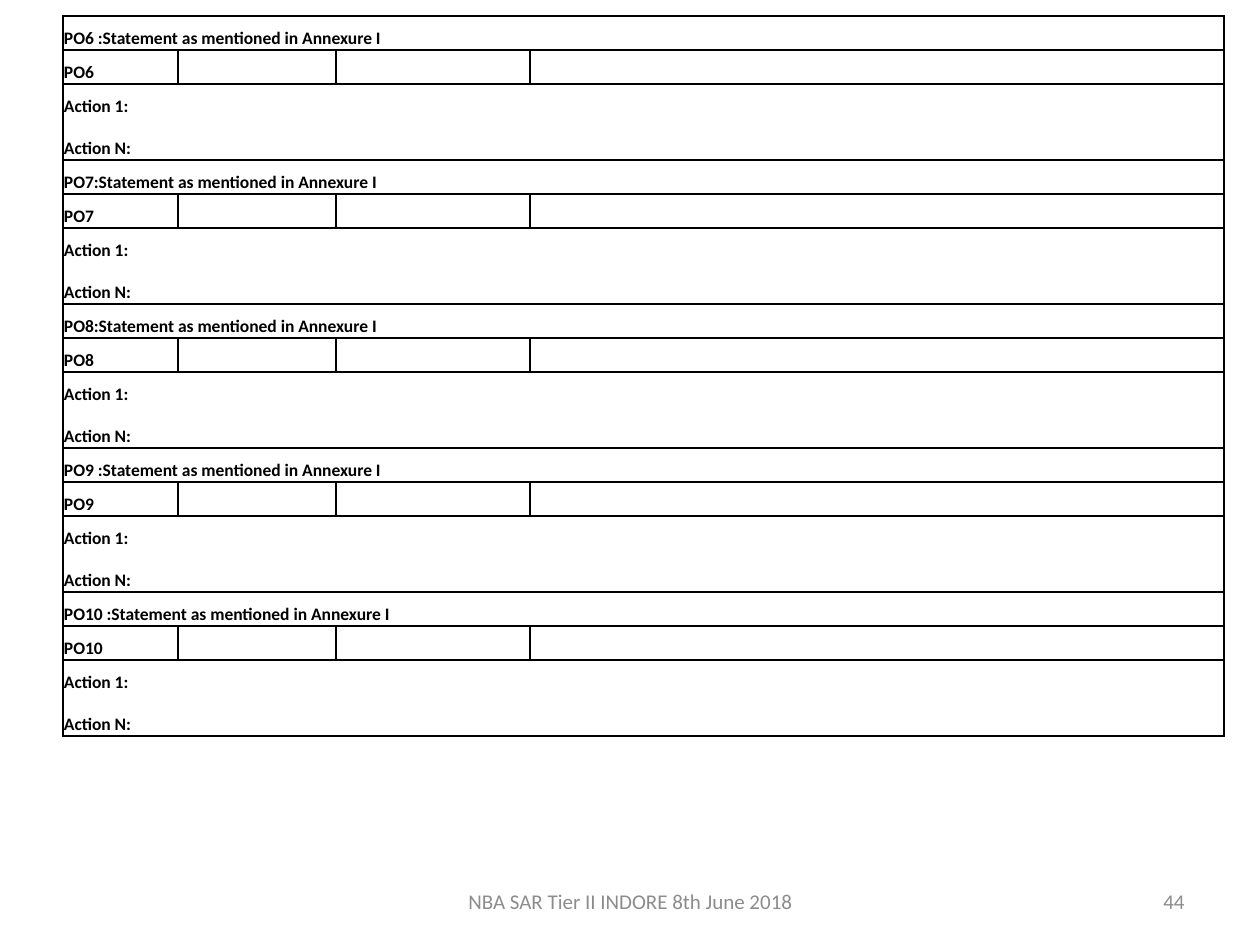
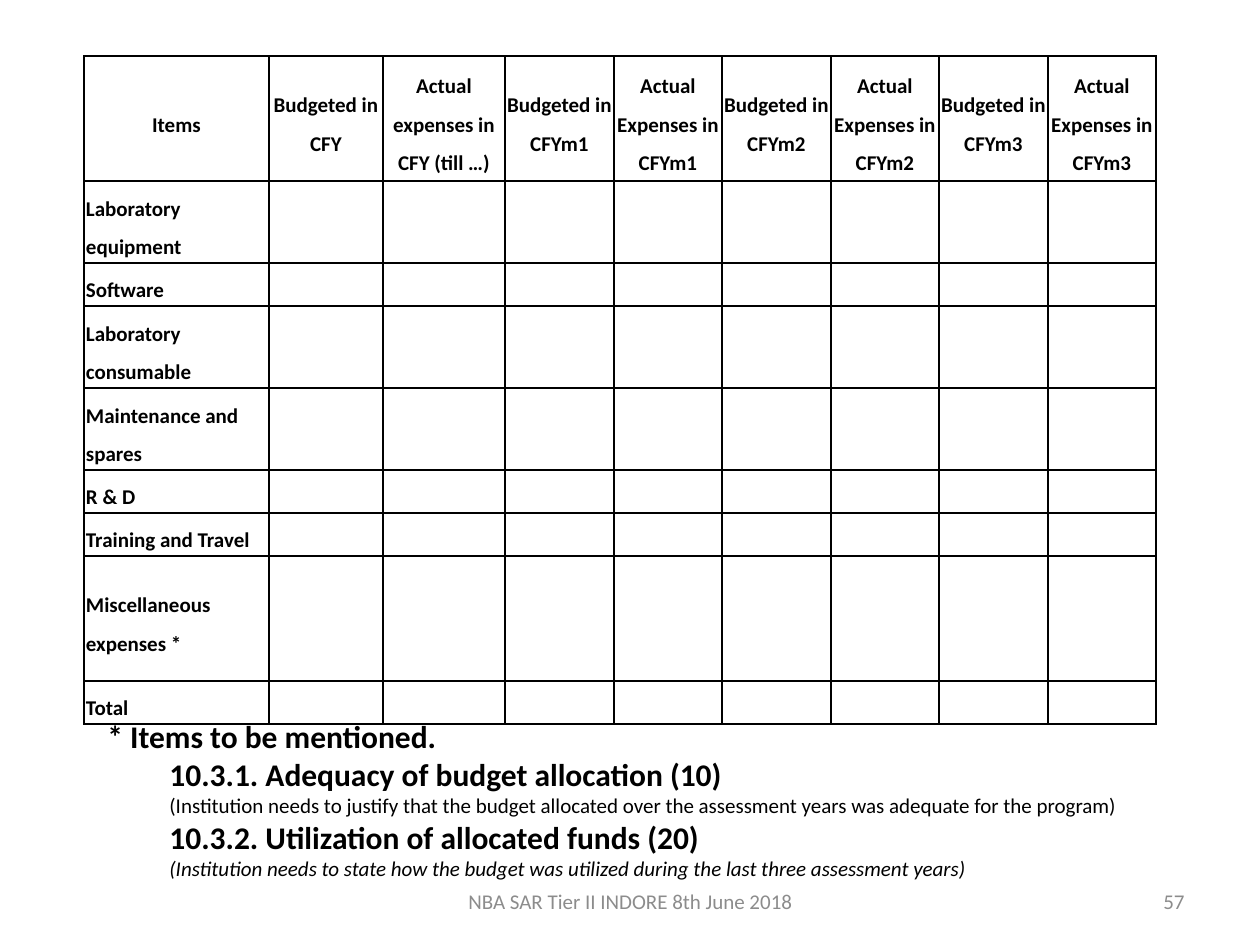
from lxml import etree
from pptx import Presentation
from pptx import util as u
from pptx.dml.color import RGBColor
from pptx.enum import text
from pptx.oxml.ns import qn

EMU_PER_PX = 914400 / 126
BLACK = RGBColor(0x00, 0x00, 0x00)
GREY = RGBColor(0x8C, 0x8C, 0x8C)
FONT = "Calibri"
FOOTER = "NBA SAR Tier II INDORE 8th June 2018"
LEFT, CENTER, RIGHT = text.PP_ALIGN.LEFT, text.PP_ALIGN.CENTER, text.PP_ALIGN.RIGHT

OUTCOMES = ["PO6 :", "PO7:", "PO8:", "PO9 :", "PO10 :"]
YEARS = ["CFYm1", "CFYm2", "CFYm3"]
BUDGET_ROWS = [
    ("Laboratory equipment", 82),
    ("Software", 43),
    ("Laboratory consumable", 82),
    ("Maintenance and spares", 82),
    ("R & D", 43),
    ("Training and Travel", 43),
    ("Miscellaneous expenses *", 125),
    ("Total", 43),
]
NOTES = [
    ("* Items to be mentioned.", 0, 18, True, False),
    ("10.3.1. Adequacy of budget allocation (10)", 62, 18, True, False),
    ("(Institution needs to justify that the budget allocated over the assessment "
     "years was adequate for the program)", 62, 12, False, False),
    ("10.3.2. Utilization of allocated funds (20)", 62, 18, True, False),
    ("(Institution needs to state how the budget was utilized during the last "
     "three assessment years)", 62, 12, False, True),
]


def px(length):
    """Turn pixels into EMU."""
    return u.Emu(round(length * EMU_PER_PX))


def format_para(para, size, color=BLACK, bold=False, italic=False, align=LEFT):
    """Align a paragraph and format its runs."""
    para.alignment = align
    for span in para.runs:
        font = span.font
        font.name, font.size = FONT, u.Pt(size)
        font.bold, font.italic = bold, italic
        font.color.rgb = color


def add_box(page, box, lines, anchor=text.MSO_ANCHOR.TOP):
    """Add a wrapping text box holding the given lines and return its paragraphs."""
    frame = page.shapes.add_textbox(*map(px, box)).text_frame
    frame.word_wrap = True
    frame.vertical_anchor = anchor
    frame.text = "\n".join(lines)
    return frame.paragraphs


def add_footer(page, number):
    """Add the event name and the page number at the foot of a page."""
    for box, words, align in (((431, 876, 399, 50), FOOTER, CENTER),
                              ((903, 876, 294, 50), str(number), RIGHT)):
        para, = add_box(page, box, [words], text.MSO_ANCHOR.MIDDLE)
        format_para(para, 12, GREY, align=align)


def outline_cell(cell):
    """Leave a cell unfilled with a thin black line on every side."""
    cell.fill.background()
    properties = cell._tc.get_or_add_tcPr()
    for position, side in enumerate(("lnL", "lnR", "lnT", "lnB")):
        line = etree.Element(qn(f"a:{side}"), w=str(u.Pt(1)))
        fill = etree.SubElement(line, qn("a:solidFill"))
        etree.SubElement(fill, qn("a:srgbClr"), val=str(BLACK))
        properties.insert(position, line)


def fill_cell(cell, words, size, margin, align):
    """Write bold, widely spaced text into an outlined cell."""
    outline_cell(cell)
    cell.margin_left = cell.margin_right = px(margin)
    cell.margin_top = cell.margin_bottom = px(margin)
    cell.vertical_anchor = text.MSO_ANCHOR.MIDDLE
    cell.text_frame.text = words
    for index, para in enumerate(cell.text_frame.paragraphs):
        para.line_spacing = 1.5
        if index:
            para.space_before = u.Pt(6)
        format_para(para, size, bold=True, align=align)
        if not para.runs:
            etree.SubElement(para._p, qn("a:endParaRPr"), sz=str(size * 100))


def add_grid(page, left, top, columns, heights, rows, size, margin):
    """Add a plain ruled table; a row with a single text spans all columns."""
    table = page.shapes.add_table(len(rows), len(columns), px(left), px(top),
                                  px(sum(columns)), px(sum(heights))).table
    table.first_row = table.horz_banding = False
    for column, width in zip(table.columns, columns):
        column.width = px(width)
    for index, (row, height) in enumerate(zip(rows, heights)):
        table.rows[index].height = px(height)
        align = CENTER if all(row) and len(row) > 1 else LEFT
        padded = row + [""] * (len(columns) - len(row))
        for number, words in enumerate(padded):
            fill_cell(table.cell(index, number), words, size, margin, align)
        if len(row) == 1:
            table.cell(index, 0).merge(table.cell(index, len(columns) - 1))


def build_outcomes(page):
    """Build the page of programme outcomes and their actions."""
    rows = []
    for label in OUTCOMES:
        rows += [[label + "Statement as mentioned in Annexure I"],
                 [label.rstrip(" :"), "", "", ""],
                 ["Action 1:\nAction N:"]]
    add_grid(page, 63, 16, [115, 158, 194, 694], [33, 33, 76] * len(OUTCOMES),
             rows, size=10, margin=1)
    add_footer(page, 44)


def add_notes(page, box):
    """Add the notes under the budget table."""
    for para, (_, indent, size, bold, italic) in zip(
            add_box(page, box, [note[0] for note in NOTES]), NOTES):
        properties = para._p.get_or_add_pPr()
        properties.set("marL", str(px(indent)))
        properties.set("indent", "0")
        format_para(para, size, bold=bold, italic=italic)


def build_budget(page):
    """Build the page of budgeted and actual expenses."""
    header = ["Items", "Budgeted in CFY", "Actual expenses in CFY (till …)"]
    for year in YEARS:
        header += [f"Budgeted in {year}", f"Actual Expenses in {year}"]
    rows = [header] + [[item] + [""] * (len(header) - 1) for item, _ in BUDGET_ROWS]
    heights = [125] + [height for _, height in BUDGET_ROWS]
    add_grid(page, 84, 56, [185, 114, 122] + [109, 108] * len(YEARS), heights,
             rows, size=12, margin=2)
    add_notes(page, (95, 711, 1062, 178))
    add_footer(page, 57)


def main():
    """Build and save the deck."""
    deck = Presentation()
    deck.slide_width, deck.slide_height = px(1260), px(945)
    for build in (build_outcomes, build_budget):
        build(deck.slides.add_slide(deck.slide_layouts[6]))
    deck.save("out.pptx")


if __name__ == "__main__":
    main()
